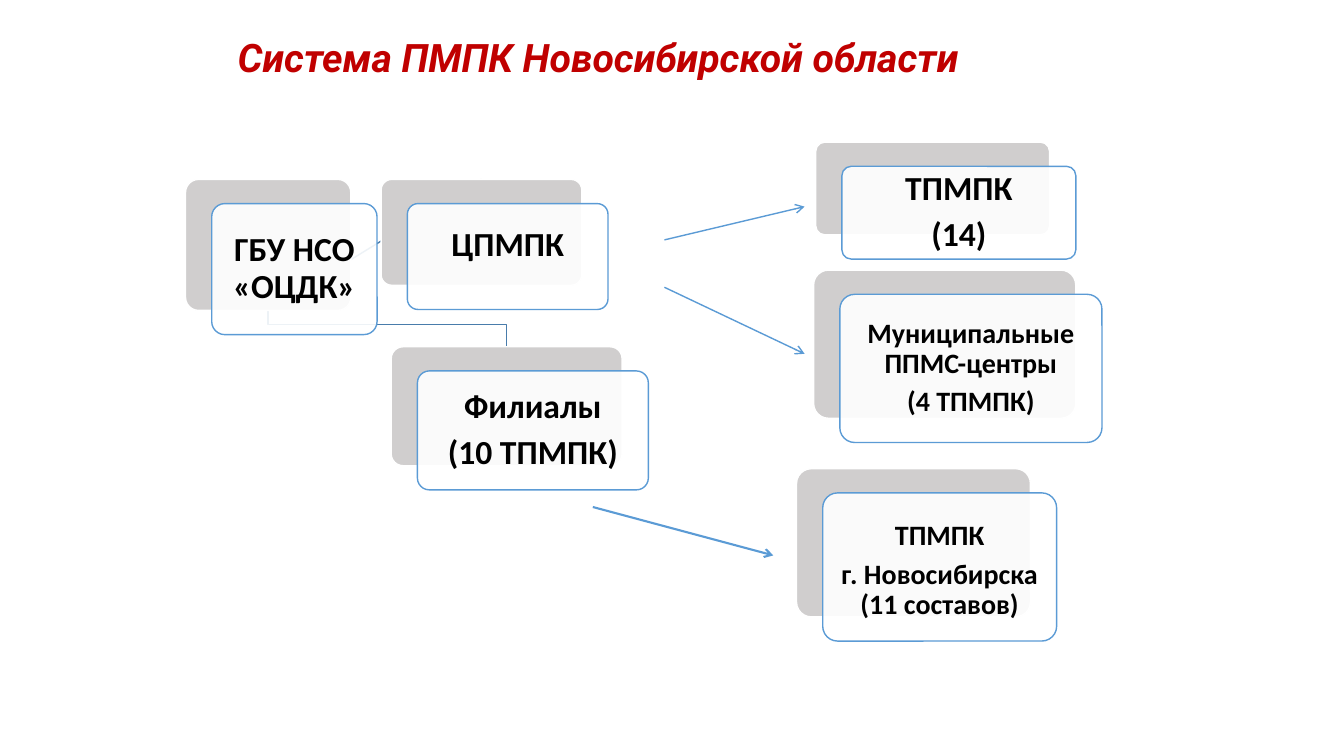
from dataclasses import dataclass

from lxml.etree import SubElement
from pptx import Presentation
from pptx.dml.color import RGBColor
from pptx.enum.shapes import MSO_CONNECTOR as CONN, MSO_SHAPE as SHAPE
from pptx.enum.text import MSO_ANCHOR as ANCHOR, PP_ALIGN as ALIGN
from pptx.oxml.ns import qn
from pptx.util import Inches, Pt


@dataclass(frozen=True)
class Theme:
    """Colours, fonts and sizes of the slide."""
    title: RGBColor = RGBColor(0xC0, 0x00, 0x00)
    text: RGBColor = RGBColor(0x00, 0x00, 0x00)
    back: RGBColor = RGBColor(0xD0, 0xCE, 0xCE)
    white: RGBColor = RGBColor(0xFF, 0xFF, 0xFF)
    accent: RGBColor = RGBColor(0x5B, 0x9B, 0xD5)
    link: RGBColor = RGBColor(0x49, 0x7C, 0xAB)
    title_font: str = "Roboto"
    body_font: str = "Calibri"
    title_size: int = 28
    large: int = 24
    small: int = 20


T = Theme()
OFFSET_X, OFFSET_Y = 0.26, 0.24
INSET = 0.12

CENTRE = (1.84, 1.78, 1.64, 1.3)
COMMISSION = (3.78, 1.78, 1.99, 1.05)
BRANCHES = (3.88, 3.44, 2.29, 1.18)
CARDS = [
    (CENTRE, ["ГБУ НСО «ОЦДК»"], T.large, 0),
    (COMMISSION, ["ЦПМПК"], T.large, -0.11),
    (BRANCHES, ["Филиалы", "(10 ТПМПК)"], T.large, 0),
    ((8.07, 2.68, 2.6, 1.47),
     ["Муниципальные ППМС-центры", "(4 ТПМПК)"], T.small, 0),
    ((8.09, 1.41, 2.32, 0.92), ["ТПМПК", "(14)"], T.large, 0),
    ((7.9, 4.65, 2.32, 1.47),
     ["ТПМПК", "г. Новосибирска (11 составов)"], T.small, 0.04),
]
ARROWS = [
    ((6.59, 2.38), (7.98, 2.05), 1),
    ((6.59, 2.85), (7.98, 3.51), 1),
    ((5.88, 5.03), (7.67, 5.51), 1.5),
]


def style_runs(p, font, size, color, italic=False):
    """Format every run of a paragraph in bold."""
    for r in p.runs:
        r.font.name, r.font.size = font, Pt(size)
        r.font.bold, r.font.italic = True, italic
        r.font.color.rgb = color


def add_title(s, box, text):
    """Write the slide title in its box."""
    tf = s.shapes.add_textbox(*map(Inches, box)).text_frame
    tf.word_wrap = True
    tf.vertical_anchor = ANCHOR.MIDDLE
    p = tf.paragraphs[0]
    p.text = text
    p.line_spacing = 0.9
    style_runs(p, T.title_font, T.title_size, T.title, italic=True)


def add_plate(s, box, fill, line):
    """Draw one rounded plate."""
    sp = s.shapes.add_shape(SHAPE.ROUNDED_RECTANGLE, *map(Inches, box))
    sp.adjustments[0] = 0.1
    sp.shadow.inherit = False
    sp.fill.solid()
    sp.fill.fore_color.rgb = fill
    sp.line.color.rgb = line
    sp.line.width = Pt(1)
    return sp


def add_card(s, box, lines, size, shift):
    """Draw a grey plate with a translucent text plate over it."""
    x, y, w, h = box
    back = add_plate(s, box, T.back, T.white)
    front = add_plate(s, (x + OFFSET_X, y + OFFSET_Y, w, h), T.white, T.accent)
    color = front.fill._xPr.find(qn("a:solidFill"))[0]
    SubElement(color, qn("a:alpha"), val="90000")
    tf = front.text_frame
    tf.word_wrap = True
    tf.vertical_anchor = ANCHOR.MIDDLE
    tf.margin_left = tf.margin_right = Inches(INSET)
    tf.margin_top = Inches(max(0, 2 * shift))
    tf.margin_bottom = Inches(max(0, -2 * shift))
    tf.text = "\n".join(lines)
    for p in tf.paragraphs:
        p.alignment = ALIGN.CENTER
        p.line_spacing = 0.9
        p.space_after = Pt(0.3 * size)
        style_runs(p, T.body_font, size, T.text)
    tf.paragraphs[-1].space_after = Pt(0)
    return back


def add_line(s, start, end, color, width):
    """Draw a straight line without a shadow."""
    c = s.shapes.add_connector(CONN.STRAIGHT, *map(Inches, start + end))
    c.line.color.rgb = color
    c.line.width = Pt(width)
    SubElement(c._element.spPr, qn("a:effectLst"))
    return c


def add_arrow(s, start, end, width):
    """Draw a line with an open arrowhead at its end."""
    c = add_line(s, start, end, T.accent, width)
    SubElement(c.line._get_or_add_ln(), qn("a:tailEnd"), type="arrow")


def add_elbow(s, upper, lower):
    """Draw a stepped line from the bottom of one card to the top of another."""
    x1, y1 = upper[0] + upper[2] / 2, upper[1] + upper[3]
    x2, y2 = lower[0] + lower[2] / 2, lower[1]
    bend = y1 + 0.14
    fb = s.shapes.build_freeform(Inches(x1), Inches(y1))
    points = [(x1, bend), (x2, bend), (x2, y2)]
    fb.add_line_segments([(Inches(x), Inches(y)) for x, y in points], close=False)
    sp = fb.convert_to_shape()
    sp.shadow.inherit = False
    sp.fill.background()
    sp.line.color.rgb = T.link
    sp.line.width = Pt(1)


def add_scheme(s):
    """Draw the links, the cards and the arrows between them."""
    add_elbow(s, CENTRE, BRANCHES)
    link = add_line(s, (2.66, 3.08), (4.78, 1.78), T.link, 1)
    backs = [add_card(s, *card) for card in CARDS]
    link.begin_connect(backs[0], 2)
    link.end_connect(backs[1], 0)
    for arrow in ARROWS:
        add_arrow(s, *arrow)


def main():
    """Build and save the slide."""
    prs = Presentation()
    prs.slide_width, prs.slide_height = Inches(13.33), Inches(7.5)
    s = prs.slides.add_slide(prs.slide_layouts[6])
    add_title(s, (2.26, 0.25, 10.6, 0.69), "Система ПМПК Новосибирской области")
    add_scheme(s)
    prs.save("out.pptx")


if __name__ == "__main__":
    main()
